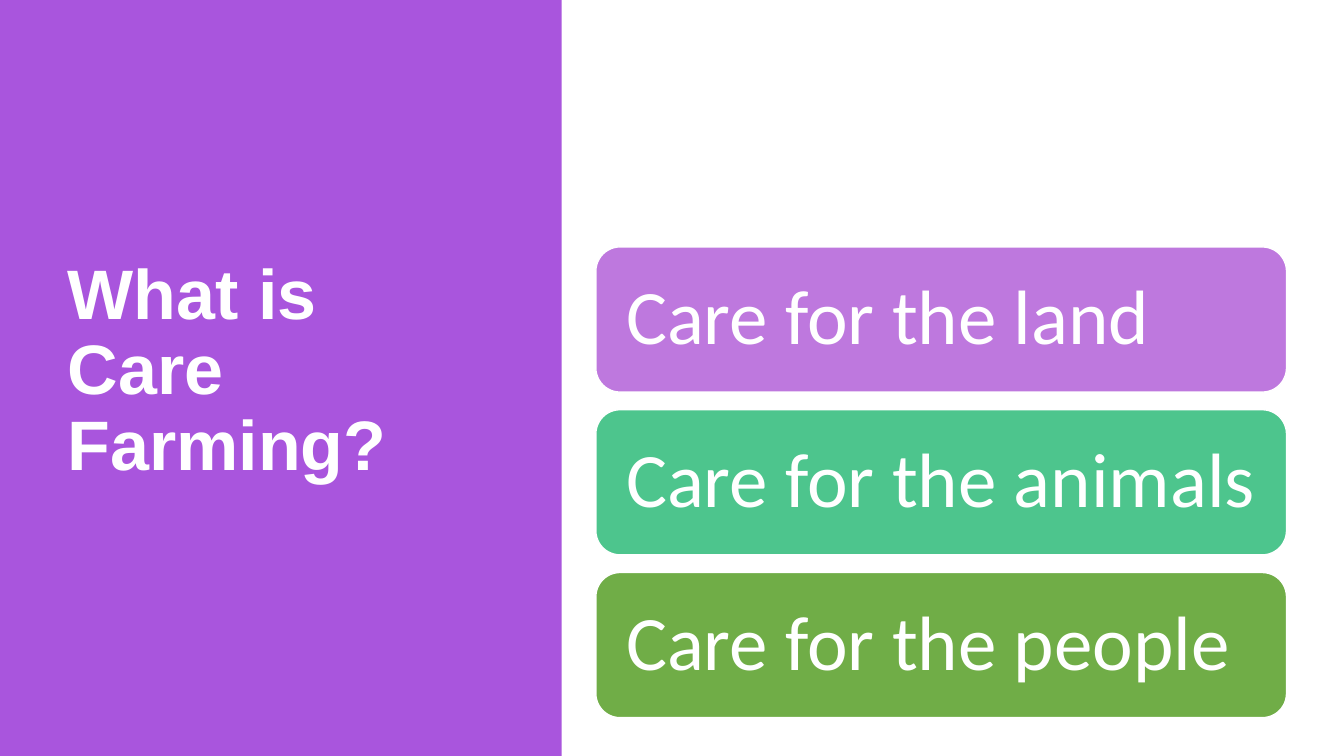
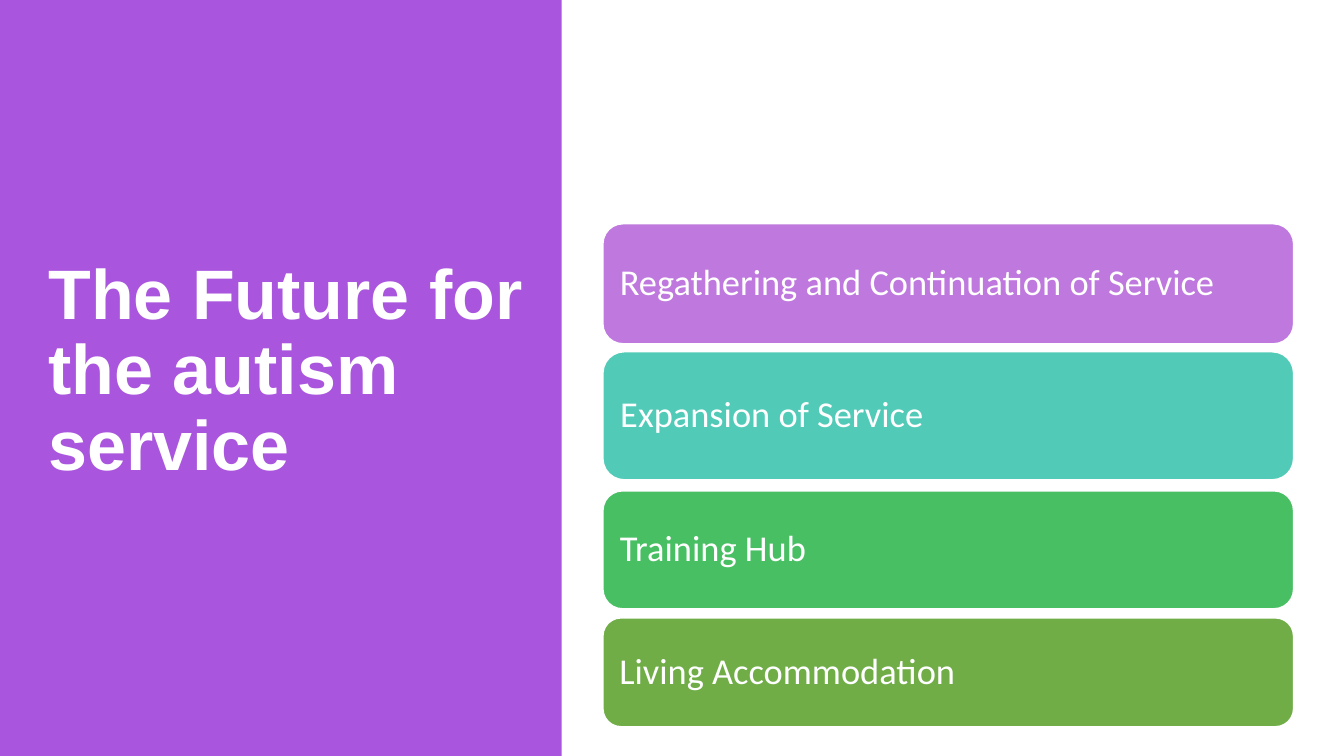
from dataclasses import dataclass

from pptx import Presentation
from pptx.dml.color import RGBColor
from pptx.enum.shapes import MSO_SHAPE
from pptx.enum.text import MSO_ANCHOR, MSO_AUTO_SIZE, PP_ALIGN
from pptx.presentation import Presentation as Deck
from pptx.shapes.autoshape import Shape
from pptx.slide import Slide
from pptx.text.text import TextFrame
from pptx.util import Inches, Pt


@dataclass(frozen=True)
class Theme:
    panel: str = "A955DD"
    white: str = "FFFFFF"
    lilac: str = "BE78DE"
    mint: str = "4DC58D"
    teal: str = "52CAB8"
    green: str = "49BF64"
    olive: str = "70AD47"
    title_font: str = "Arial"
    body_font: str = "Calibri"
    title_size: float = 50
    large_size: float = 55
    small_size: float = 26


THEME = Theme()
SLIDE_WIDTH, SLIDE_HEIGHT = 13.33, 7.5
PANEL_WIDTH = 5.57
TITLE_TOP, TITLE_HEIGHT = 0.68, 6.02
CARD_WIDTH = 6.85
LINE_SPACING = 0.9


@dataclass(frozen=True)
class Card:
    text: str
    fill: str
    top: float
    height: float


@dataclass(frozen=True)
class CardPage:
    title: str
    title_left: float
    title_width: float
    cards_left: float
    text_size: float
    inset: float
    cards: tuple[Card, ...]


def even_cards(entries: list[tuple[str, str]], top: float, height: float, pitch: float) -> tuple[Card, ...]:
    return tuple(
        Card(text, fill, top + index * pitch, height)
        for index, (text, fill) in enumerate(entries)
    )


PAGES = (
    CardPage(
        "What is Care Farming?", 0.57, 4.16, 5.91, THEME.large_size, 0.23,
        even_cards(
            [
                ("Care for the land", THEME.lilac),
                ("Care for the animals", THEME.mint),
                ("Care for the people", THEME.olive),
            ],
            top=2.45, height=1.44, pitch=1.615,
        ),
    ),
    CardPage(
        "The Future for the autism service", 0.38, 4.97, 5.98, THEME.small_size, 0.11,
        (
            Card("Regathering and Continuation of Service", THEME.lilac, 2.22, 1.19),
            Card("Expansion of Service", THEME.teal, 3.49, 1.27),
            Card("Training Hub", THEME.green, 4.87, 1.17),
            Card("Living Accommodation", THEME.olive, 6.13, 1.08),
        ),
    ),
)


def write_text(frame: TextFrame, text: str, font: str, size: float, bold: bool = False) -> None:
    frame.word_wrap = True
    frame.auto_size = MSO_AUTO_SIZE.NONE
    frame.vertical_anchor = MSO_ANCHOR.MIDDLE
    para = frame.paragraphs[0]
    para.alignment = PP_ALIGN.LEFT
    para.line_spacing = LINE_SPACING
    span = para.add_run()
    span.text = text
    span.font.name = font
    span.font.size = Pt(size)
    span.font.bold = bold
    span.font.color.rgb = RGBColor.from_string(THEME.white)


def add_box(page: Slide, kind: MSO_SHAPE, left: float, top: float, width: float, height: float, fill: str) -> Shape:
    box = page.shapes.add_shape(kind, Inches(left), Inches(top), Inches(width), Inches(height))
    box.shadow.inherit = False
    box.fill.solid()
    box.fill.fore_color.rgb = RGBColor.from_string(fill)
    box.line.fill.background()
    return box


def add_panel(page: Slide) -> None:
    panel = add_box(page, MSO_SHAPE.RECTANGLE, 0, 0, PANEL_WIDTH, SLIDE_HEIGHT, THEME.panel)
    page.shapes.title._element.addprevious(panel._element)


def place_title(page: Slide, content: CardPage) -> None:
    title = page.shapes.title
    title.left, title.top = Inches(content.title_left), Inches(TITLE_TOP)
    title.width, title.height = Inches(content.title_width), Inches(TITLE_HEIGHT)
    write_text(title.text_frame, content.title, THEME.title_font, THEME.title_size, bold=True)


def add_card(page: Slide, card: Card, content: CardPage) -> None:
    box = add_box(
        page, MSO_SHAPE.ROUNDED_RECTANGLE,
        content.cards_left, card.top, CARD_WIDTH, card.height, card.fill,
    )
    box.line.color.rgb = RGBColor.from_string(THEME.white)
    box.line.width = Pt(1)
    frame = box.text_frame
    frame.margin_left = frame.margin_right = Inches(content.inset)
    frame.margin_top = frame.margin_bottom = Inches(content.inset)
    write_text(frame, card.text, THEME.body_font, content.text_size)


def add_page(deck: Deck, content: CardPage) -> None:
    page = deck.slides.add_slide(deck.slide_layouts.get_by_name("Title Only"))
    add_panel(page)
    place_title(page, content)
    for card in content.cards:
        add_card(page, card, content)


def main() -> None:
    deck = Presentation()
    deck.slide_width, deck.slide_height = Inches(SLIDE_WIDTH), Inches(SLIDE_HEIGHT)
    for content in PAGES:
        add_page(deck, content)
    deck.save("out.pptx")


if __name__ == "__main__":
    main()
